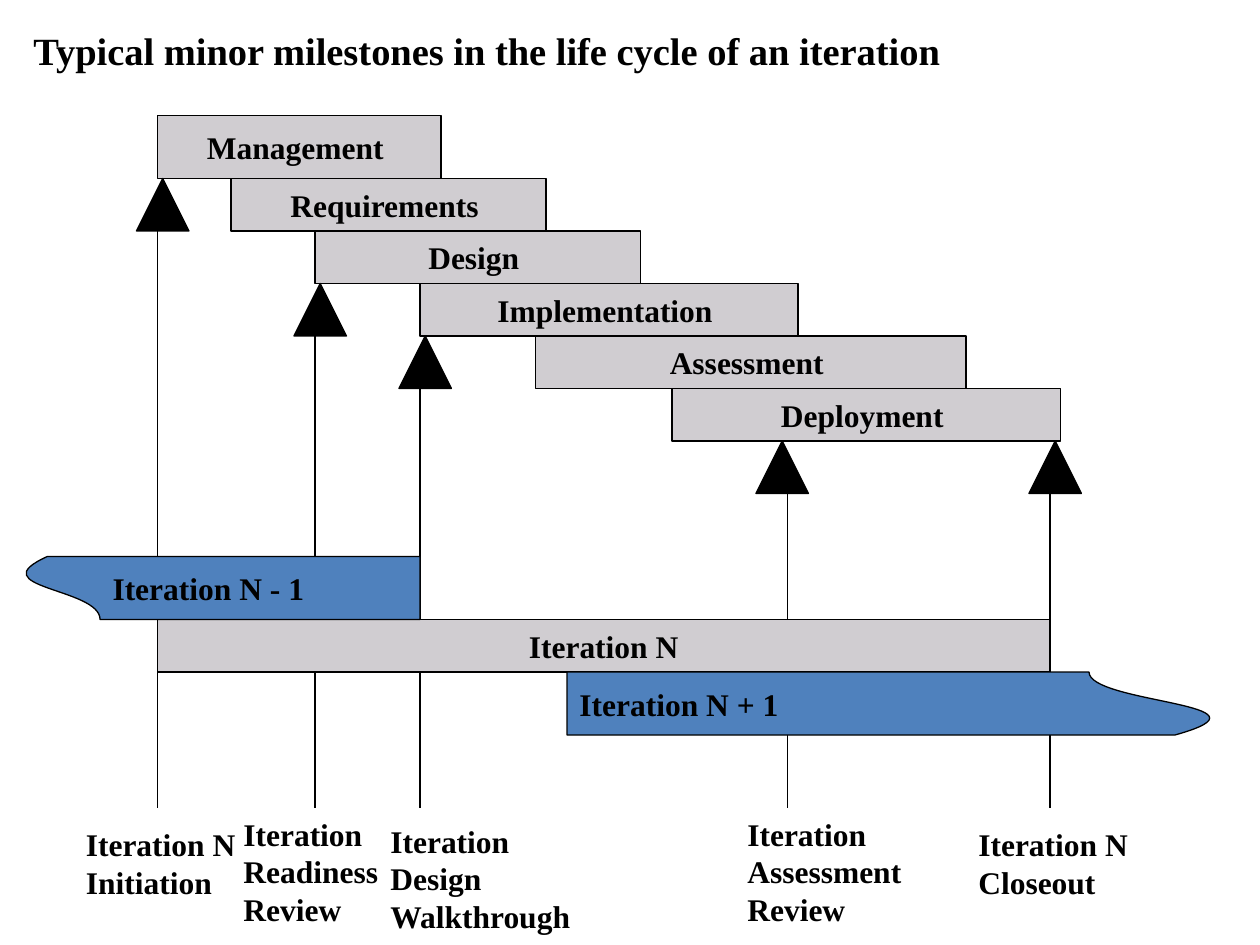
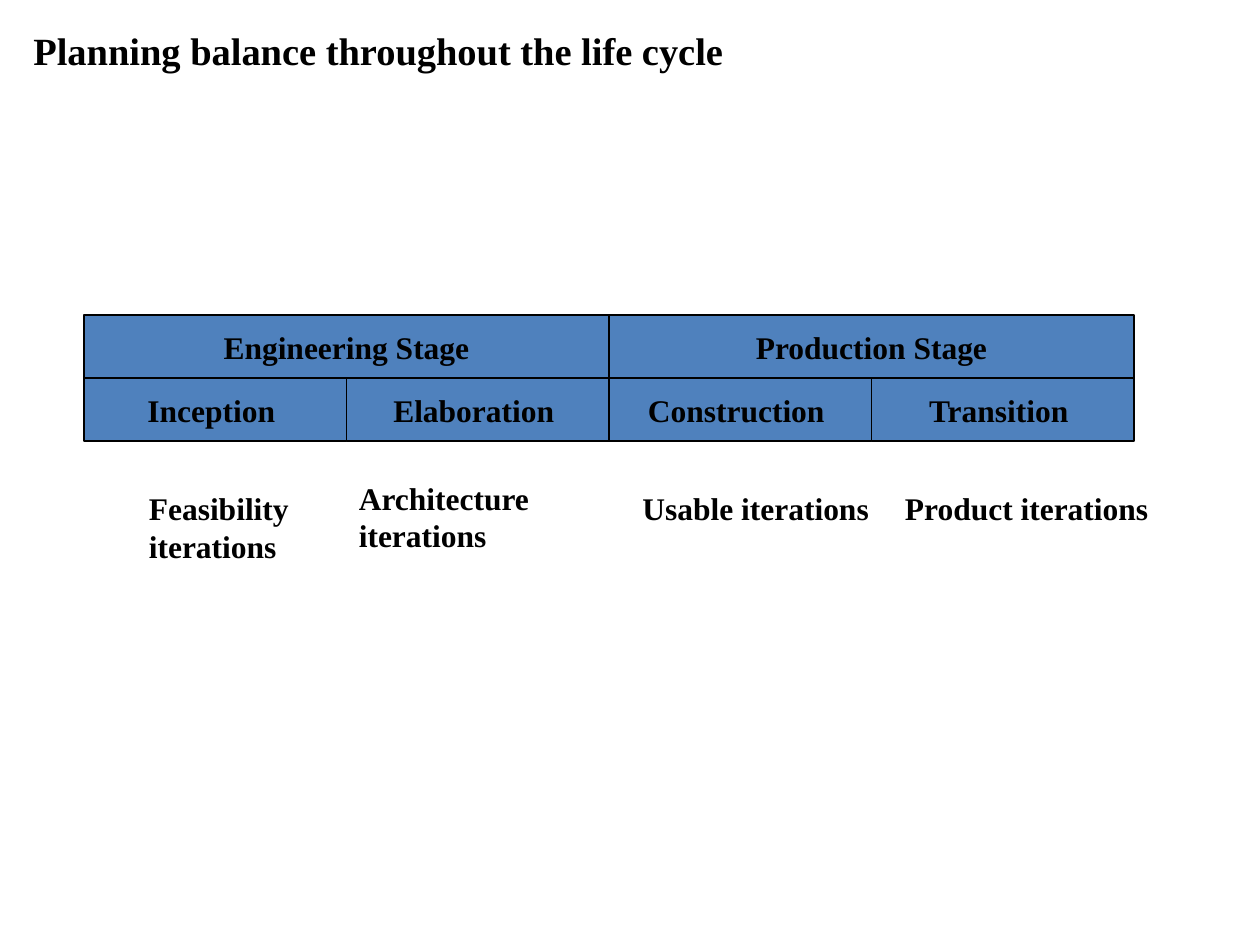
from dataclasses import dataclass

from lxml.etree import SubElement
from pptx import Presentation
from pptx.dml.color import RGBColor
from pptx.enum.shapes import MSO_CONNECTOR, MSO_SHAPE
from pptx.enum.text import MSO_ANCHOR, PP_ALIGN
from pptx.oxml.ns import qn
from pptx.shapes.autoshape import Shape
from pptx.slide import Slide
from pptx.text.text import TextFrame
from pptx.util import Pt


@dataclass(frozen=True)
class Theme:
    font: str = "Times New Roman"
    ink: RGBColor = RGBColor(0x00, 0x00, 0x00)
    paper: RGBColor = RGBColor(0xFF, 0xFF, 0xFF)
    gray: RGBColor = RGBColor(0xD0, 0xCD, 0xD1)
    blue: RGBColor = RGBColor(0x4F, 0x81, 0xBD)
    title_size: float = 22
    text_size: float = 18
    leading: float = 1.2
    line_width: float = 0.75


THEME = Theme()


@dataclass(frozen=True)
class Block:
    text: str
    left: float
    top: float
    width: float
    height: float
    fill: RGBColor = THEME.gray


@dataclass(frozen=True)
class Milestone:
    left: float
    top: float
    line_left: float


@dataclass(frozen=True)
class Label:
    text: str
    left: float
    top: float
    width: float
    lines: int


@dataclass(frozen=True)
class Banner:
    block: Block
    shape_rotation: int
    text_rotation: int


MARKER_SIZE = 30
MILESTONE_BOTTOM = 462

WORKFLOWS = [
    Block("Management ", 90, 66, 162, 36),
    Block("Requirements ", 132, 102, 180, 30),
    Block("Design ", 180, 132, 186, 30),
    Block("Implementation ", 240, 162, 216, 30),
    Block("Assessment ", 306, 192, 246, 30),
    Block("Deployment ", 384, 222, 222, 30),
]
MILESTONES = [
    Milestone(78, 102, 90),
    Milestone(168, 162, 180),
    Milestone(228, 192, 240),
    Milestone(432, 252, 450),
    Milestone(588, 252, 600),
]
CURRENT_ITERATION = Block("Iteration N", 90, 354, 510, 30)
BANNERS = [
    Banner(Block("Iteration N + 1 ", 324, 384, 372, 36, THEME.blue), 270, 0),
    Banner(Block("Iteration N - 1", 12, 318, 228, 36, THEME.blue), 90, 180),
]
REVIEWS = [
    Label("Iteration N Initiation", 42, 468, 102, 2),
    Label("Iteration Readiness Review", 132, 462, 96, 3),
    Label("Iteration Design Walkthrough", 216, 466, 120, 3),
    Label("Iteration Assessment Review", 420, 462, 114, 3),
    Label("Iteration N Closeout", 552, 468, 114, 2),
]

STAGES = {
    "Engineering Stage": ["Inception ", "Elaboration "],
    "Production Stage": ["Construction ", "Transition "],
}
STAGE_LEFT, STAGE_TOP = 48, 180
STAGE_WIDTH, STAGE_HEIGHT = 300, 36
FOCUSES = [
    Label("Feasibility iterations", 78, 276, 150, 2),
    Label("Architecture iterations", 198, 270, 180, 2),
    Label("Usable iterations", 360, 276, 156, 1),
    Label("Product iterations", 510, 276, 156, 1),
]


def write_text(frame: TextFrame, text: str, size: float) -> None:
    frame.text = text
    for para in frame.paragraphs:
        for span in para.runs:
            span.font.name = THEME.font
            span.font.size = Pt(size)
            span.font.bold = True
            span.font.color.rgb = THEME.ink


def add_text_box(page: Slide, label: Label, size: float) -> None:
    leading = size * THEME.leading
    height = label.lines * leading + 7.2
    box = page.shapes.add_textbox(
        Pt(label.left), Pt(label.top), Pt(label.width), Pt(height)
    )
    box.text_frame.word_wrap = True
    write_text(box.text_frame, label.text, size)
    box.text_frame.paragraphs[0].line_spacing = Pt(leading)


def add_outlined(page: Slide, preset: MSO_SHAPE, block: Block) -> Shape:
    shape = page.shapes.add_shape(
        preset, Pt(block.left), Pt(block.top), Pt(block.width), Pt(block.height)
    )
    shape.shadow.inherit = False
    shape.fill.solid()
    shape.fill.fore_color.rgb = block.fill
    shape.line.color.rgb = THEME.ink
    shape.line.width = Pt(THEME.line_width)
    if block.text:
        frame = shape.text_frame
        frame.word_wrap = False
        frame.vertical_anchor = MSO_ANCHOR.MIDDLE
        write_text(frame, block.text, THEME.text_size)
        frame.paragraphs[0].alignment = PP_ALIGN.CENTER
    return shape


def add_marker(page: Slide, milestone: Milestone) -> None:
    marker = Block(
        "", milestone.left, milestone.top, MARKER_SIZE, MARKER_SIZE, THEME.ink
    )
    add_outlined(page, MSO_SHAPE.ISOSCELES_TRIANGLE, marker)


def add_milestone_line(page: Slide, milestone: Milestone) -> None:
    line = page.shapes.add_connector(
        MSO_CONNECTOR.STRAIGHT,
        Pt(milestone.line_left),
        Pt(milestone.top + MARKER_SIZE),
        Pt(milestone.line_left),
        Pt(MILESTONE_BOTTOM),
    )
    line.line.color.rgb = THEME.ink
    line.line.width = Pt(THEME.line_width)
    SubElement(line._element.spPr, qn("a:effectLst"))


def add_banner(page: Slide, banner: Banner) -> None:
    block = banner.block
    inset = (block.width - block.height) / 2
    upright = Block(
        block.text,
        block.left + inset,
        block.top - inset,
        block.height,
        block.width,
        block.fill,
    )
    shape = add_outlined(page, MSO_SHAPE.FLOWCHART_DOCUMENT, upright)
    shape.rotation = banner.shape_rotation
    body = shape.text_frame._txBody.bodyPr
    body.set("vert", "eaVert")
    if banner.text_rotation:
        body.set("rot", str(banner.text_rotation * 60000))


def add_page(deck: Presentation, title: str) -> Slide:
    page = deck.slides.add_slide(deck.slide_layouts[6])
    page.background.fill.solid()
    page.background.fill.fore_color.rgb = THEME.paper
    add_text_box(page, Label(title, 12, 12, 696, 1), THEME.title_size)
    return page


def build_milestones(deck: Presentation) -> None:
    page = add_page(deck, "Typical minor milestones in the life cycle of an iteration")
    for workflow in WORKFLOWS:
        add_outlined(page, MSO_SHAPE.RECTANGLE, workflow)
    for milestone in MILESTONES:
        add_marker(page, milestone)
    for milestone in MILESTONES:
        add_milestone_line(page, milestone)
    add_outlined(page, MSO_SHAPE.RECTANGLE, CURRENT_ITERATION)
    for banner in BANNERS:
        add_banner(page, banner)
    for review in REVIEWS:
        add_text_box(page, review, THEME.text_size)


def build_planning(deck: Presentation) -> None:
    page = add_page(deck, "Planning balance throughout the life cycle")
    phases = [phase for group in STAGES.values() for phase in group]
    for row, names in enumerate([list(STAGES), phases]):
        width = STAGE_WIDTH * len(STAGES) / len(names)
        for column, name in enumerate(names):
            cell = Block(
                name,
                STAGE_LEFT + column * width,
                STAGE_TOP + row * STAGE_HEIGHT,
                width,
                STAGE_HEIGHT,
                THEME.blue,
            )
            add_outlined(page, MSO_SHAPE.RECTANGLE, cell)
    for focus in FOCUSES:
        add_text_box(page, focus, THEME.text_size)


def main() -> None:
    deck = Presentation()
    deck.slide_width, deck.slide_height = Pt(720), Pt(540)
    build_milestones(deck)
    build_planning(deck)
    deck.save("out.pptx")


if __name__ == "__main__":
    main()
